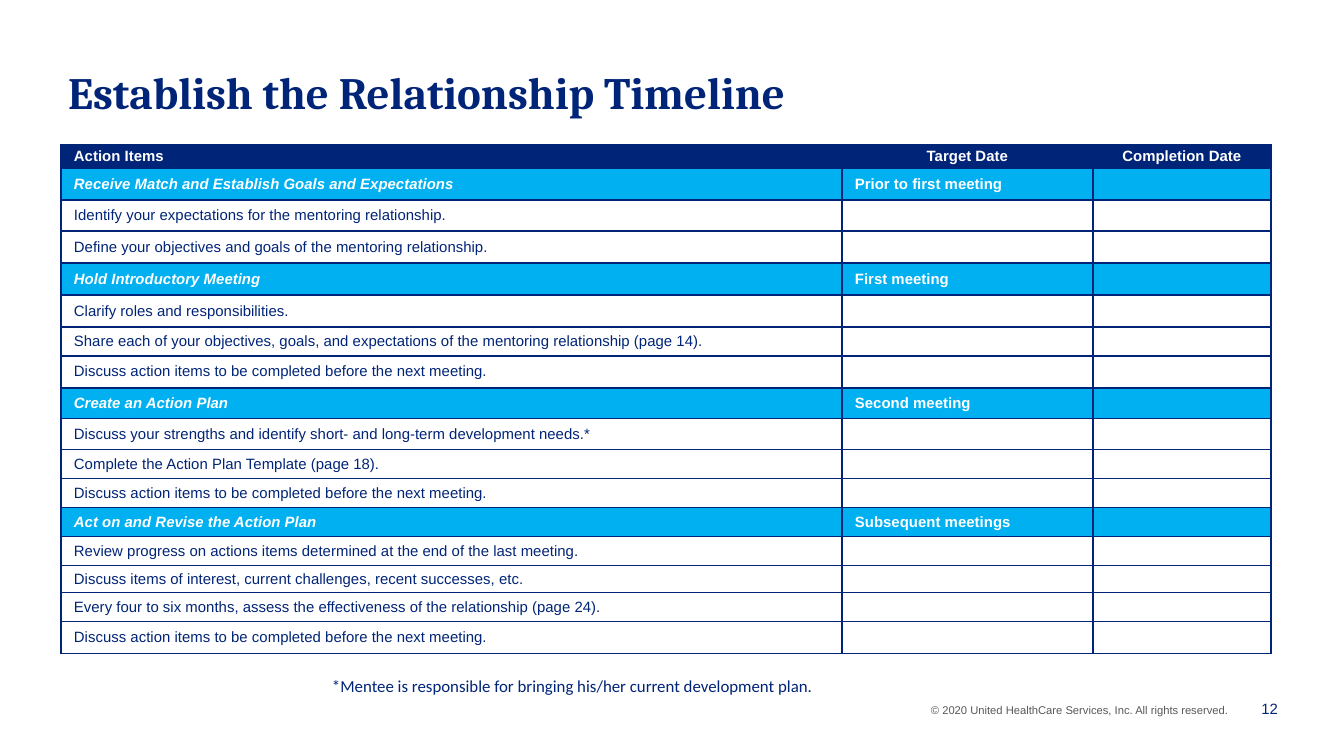
import pptx
import pptx.util
import pptx.dml.color
import pptx.enum.text
import pptx.oxml.ns
import lxml.etree

PX = 6804  # EMU in one px, 134.4 px to the inch
HUES = {"navy": "002477", "sky": "00B0F0", "white": "FFFFFF", "gray": "595959"}
ALIGN = pptx.enum.text.PP_ALIGN
ANCHOR = pptx.enum.text.MSO_ANCHOR

COLS = [781, 251, 178]
HEAD = ["Action Items", "Target Date", "Completion Date"]
NEXT = "Discuss action items to be completed before the next meeting."
# Each stage: name, target date, row height, then its (item, row height) pairs
STAGES = [
    ("Receive Match and Establish Goals and Expectations", "Prior to first meeting", 32, [
        ("Identify your expectations for the mentoring relationship.", 31),
        ("Define your objectives and goals of the mentoring relationship.", 32)]),
    ("Hold Introductory Meeting", "First meeting", 32, [
        ("Clarify roles and responsibilities.", 32),
        ("Share each of your objectives, goals, and expectations of the mentoring "
         "relationship (page 14).", 29),
        (NEXT, 32)]),
    ("Create an Action Plan", "Second meeting", 31, [
        ("Discuss your strengths and identify short- and long-term development needs.*", 31),
        ("Complete the Action Plan Template (page 18).", 29),
        (NEXT, 29)]),
    ("Act on and Revise the Action Plan", "Subsequent meetings", 29, [
        ("Review progress on actions items determined at the end of the last meeting.", 29),
        ("Discuss items of interest, current challenges, recent successes, etc.", 27),
        ("Every four to six months, assess the effectiveness of the relationship (page 24).", 29),
        (NEXT, 32)]),
]


class Deck:
    def __init__(self, wide, high):
        self.show = pptx.Presentation()
        self.show.slide_width = wide * PX
        self.show.slide_height = high * PX
        self.slide = self.show.slides.add_slide(self.show.slide_layouts[5])

    def words(self, para, text, size, hue, face="Arial", align=ALIGN.LEFT, **looks):
        """Fill a paragraph with one run; looks are further font values."""
        para.alignment = align
        run = para.add_run()
        run.text = text
        run.font.color.rgb = pptx.dml.color.RGBColor.from_string(HUES[hue])
        looks = {"name": face, "size": pptx.util.Pt(size), **looks}
        for key, value in looks.items():
            setattr(run.font, key, value)

    def frame(self, shape, box, anchor, pad):
        """Place a shape and set its text frame."""
        for key, value in zip(("left", "top", "width", "height"), box):
            setattr(shape, key, value * PX)
        frame = shape.text_frame
        looks = {"word_wrap": True, "auto_size": pptx.enum.text.MSO_AUTO_SIZE.NONE,
                 "vertical_anchor": anchor, "margin_left": 13 * PX, "margin_right": 13 * PX,
                 "margin_top": pad * PX, "margin_bottom": pad * PX}
        for key, value in looks.items():
            setattr(frame, key, value)
        return frame.paragraphs[0]

    def title(self, text, box):
        para = self.frame(self.slide.shapes.title, box, ANCHOR.MIDDLE, 7)
        self.words(para, text, 24, "navy", "Cambria", bold=True)

    def text(self, text, box, size, hue, anchor=ANCHOR.TOP, pad=7, **looks):
        shape = self.slide.shapes.add_textbox(0, 0, PX, PX)
        self.words(self.frame(shape, box, anchor, pad), text, size, hue, **looks)

    def edge(self, cell):
        """Draw a navy line on all four sides of a cell."""
        props = cell._tc.get_or_add_tcPr()
        name = pptx.oxml.ns.qn
        for side in ("a:lnL", "a:lnR", "a:lnT", "a:lnB"):
            line = lxml.etree.SubElement(props, name(side), w=str(pptx.util.Pt(1)))
            fill = lxml.etree.SubElement(line, name("a:solidFill"))
            lxml.etree.SubElement(fill, name("a:srgbClr"), val=HUES["navy"])

    def cell(self, cell, text, fill, hue, **looks):
        self.edge(cell)
        inset = {"margin_left": 13 * PX, "margin_right": 13 * PX, "margin_top": 0,
                 "margin_bottom": 0, "vertical_anchor": ANCHOR.MIDDLE}
        for key, value in inset.items():
            setattr(cell, key, value)
        cell.fill.solid()
        cell.fill.fore_color.rgb = pptx.dml.color.RGBColor.from_string(HUES[fill])
        para = cell.text_frame.paragraphs[0]
        if text:
            self.words(para, text, 8, hue, **looks)
        else:
            # An empty cell needs a small end mark, or it stretches its row
            mark = pptx.oxml.ns.qn("a:endParaRPr")
            lxml.etree.SubElement(para._p, mark, sz="800")

    def table(self, left, top, cols, rows):
        """Rows are (height, texts, fill, text hue, looks of each column)."""
        high = sum(row[0] for row in rows)
        shape = self.slide.shapes.add_table(
            len(rows), len(cols), left * PX, top * PX, sum(cols) * PX, high * PX)
        grid = shape.table
        for col, wide in zip(grid.columns, cols):
            col.width = wide * PX
        for line, (high, texts, fill, hue, looks) in zip(grid.rows, rows):
            line.height = high * PX
            for cell, text, look in zip(line.cells, texts, looks):
                self.cell(cell, text, fill, hue, **look)


def plan():
    """List the table rows: the head, then each stage with its items."""
    bold = {"bold": True}
    mid = {"bold": True, "align": ALIGN.CENTER}
    slant = {"bold": True, "italic": True}
    rows = [(23, HEAD, "navy", "white", [bold, mid, mid])]
    for name, date, high, items in STAGES:
        rows.append((high, [name, date, ""], "sky", "white", [slant, bold, bold]))
        for item, tall in items:
            rows.append((tall, [item, "", ""], "white", "navy", [{}, {}, {}]))
    return rows


def main():
    deck = Deck(1344, 756)
    deck.title("Establish the Relationship Timeline", (55, 51, 1067, 81))
    deck.table(61, 145, COLS, plan())
    deck.text("*Mentee is responsible for bringing his/her current development plan.",
              (319, 676, 1120, 20), 9, "navy", pad=0, face="Calibri")
    deck.text("© 2020 United HealthCare Services, Inc. All rights reserved.",
              (918, 696, 347, 27), 6, "gray")
    deck.text("12", (1239, 688, 52, 42), 8, "navy", ANCHOR.MIDDLE, align=ALIGN.RIGHT)
    deck.show.save("out.pptx")


if __name__ == "__main__":
    main()
